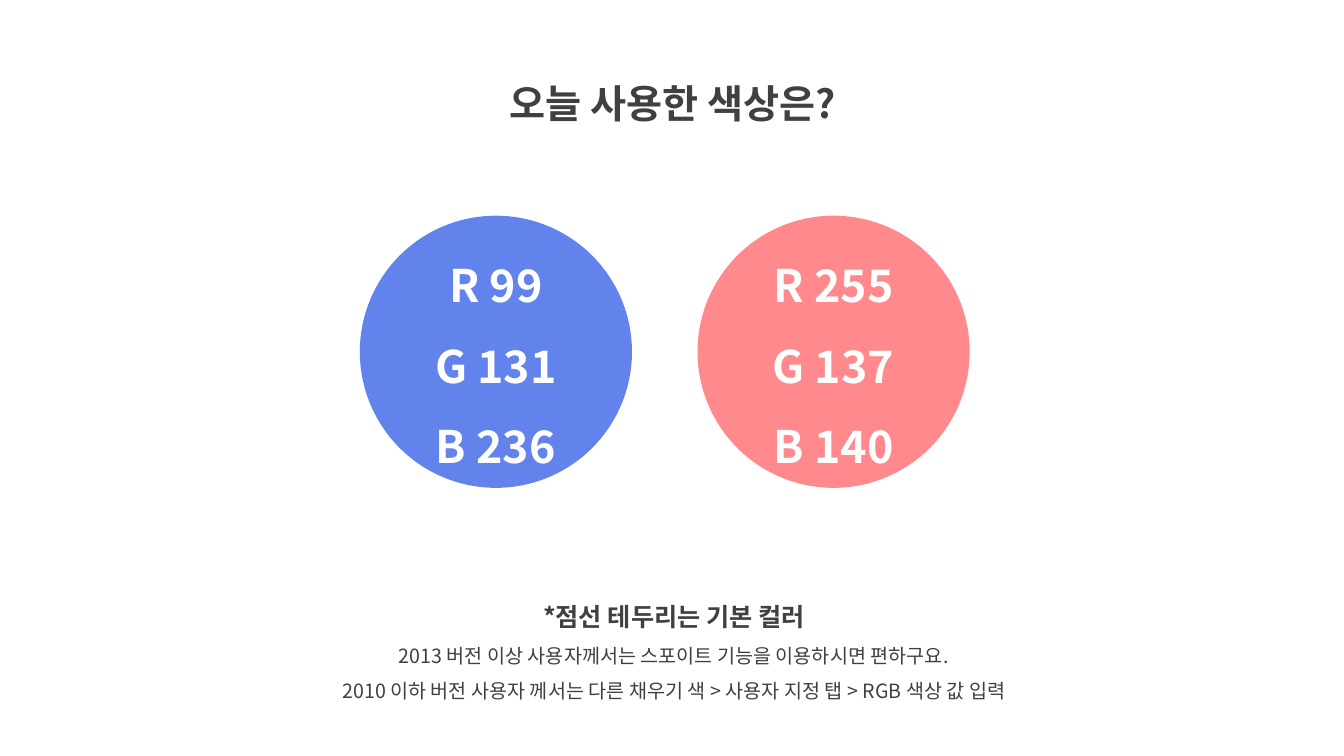
from dataclasses import dataclass

from lxml import etree
from pptx import Presentation
from pptx.dml.color import RGBColor
from pptx.enum.shapes import MSO_SHAPE
from pptx.enum.text import MSO_ANCHOR, MSO_AUTO_SIZE, PP_ALIGN
from pptx.oxml.ns import qn
from pptx.slide import Slide
from pptx.text.text import TextFrame
from pptx.util import Pt

OVAL = MSO_SHAPE.OVAL
MIDDLE = MSO_ANCHOR.MIDDLE
FIT_SHAPE = MSO_AUTO_SIZE.SHAPE_TO_FIT_TEXT
CENTER = PP_ALIGN.CENTER

FONT = "Noto Sans CJK KR"
COLORS = {"text": "404040", "white": "FFFFFF", "blue": "6383EC", "pink": "FF898C"}
LINE_SPACING = 1.5
CIRCLE_LEFT, CIRCLE_TOP = 257.04, 154.08
CIRCLE_SIZE, CIRCLE_STEP = 194.4, 241.2


@dataclass
class Line:
    text: str
    size: float
    bold: bool = False


@dataclass
class TextBlock:
    left: float
    top: float
    width: float
    height: float
    lines: list[Line]


@dataclass
class Swatch:
    color: str
    values: list[str]


TEXT_BLOCKS = [
    TextBlock(313.92, 36, 333.36, 51.84, [Line("오늘 사용한 색상은?", 28, True)]),
    TextBlock(193.68, 415.44, 575.28, 90.72, [
        Line("*점선 테두리는 기본 컬러", 18, True),
        Line("2013 버전 이상 사용자께서는 스포이트 기능을 이용하시면 편하구요.", 14),
        Line("2010 이하 버전 사용자 께서는 다른 채우기 색 > 사용자 지정 탭 > RGB 색상 값 입력", 14),
    ]),
]

SWATCHES = [
    Swatch("blue", ["R 99", "G 131", "B 236"]),
    Swatch("pink", ["R 255", "G 137", "B 140"]),
]


def rgb(color: str) -> RGBColor:
    return RGBColor.from_string(COLORS[color])


def write_line(frame: TextFrame, text: str, *, first: bool, size: float,
               bold: bool, color: str) -> None:
    """Write one centred paragraph, reusing the frame's own for the first."""
    para = frame.paragraphs[0] if first else frame.add_paragraph()
    para.alignment = CENTER
    para.line_spacing = LINE_SPACING
    span = para.add_run()
    span.text = text
    span.font.size = Pt(size)
    span.font.bold = bold
    span.font.name = FONT
    span.font.color.rgb = rgb(color)
    east_asian = etree.SubElement(span.font._element, qn("a:ea"))
    east_asian.set("typeface", FONT)


def add_text_block(page: Slide, block: TextBlock) -> None:
    box = page.shapes.add_textbox(Pt(block.left), Pt(block.top),
                                  Pt(block.width), Pt(block.height))
    frame = box.text_frame
    frame.word_wrap = True
    frame.auto_size = FIT_SHAPE
    for index, line in enumerate(block.lines):
        write_line(frame, line.text, first=index == 0, size=line.size,
                   bold=line.bold, color="text")


def add_swatch(page: Slide, swatch: Swatch, left: float) -> None:
    circle = page.shapes.add_shape(OVAL, Pt(left), Pt(CIRCLE_TOP),
                                   Pt(CIRCLE_SIZE), Pt(CIRCLE_SIZE))
    circle.shadow.inherit = False
    circle.fill.solid()
    circle.fill.fore_color.rgb = rgb(swatch.color)
    circle.line.fill.background()
    frame = circle.text_frame
    frame.word_wrap = True
    frame.vertical_anchor = MIDDLE
    for index, value in enumerate(swatch.values):
        write_line(frame, value, first=index == 0, size=32, bold=True, color="white")


def main() -> None:
    deck = Presentation()
    deck.slide_width, deck.slide_height = Pt(960), Pt(540)
    page = deck.slides.add_slide(deck.slide_layouts[6])
    for block in TEXT_BLOCKS:
        add_text_block(page, block)
    for index, swatch in enumerate(SWATCHES):
        add_swatch(page, swatch, CIRCLE_LEFT + index * CIRCLE_STEP)
    deck.save("out.pptx")


if __name__ == "__main__":
    main()
